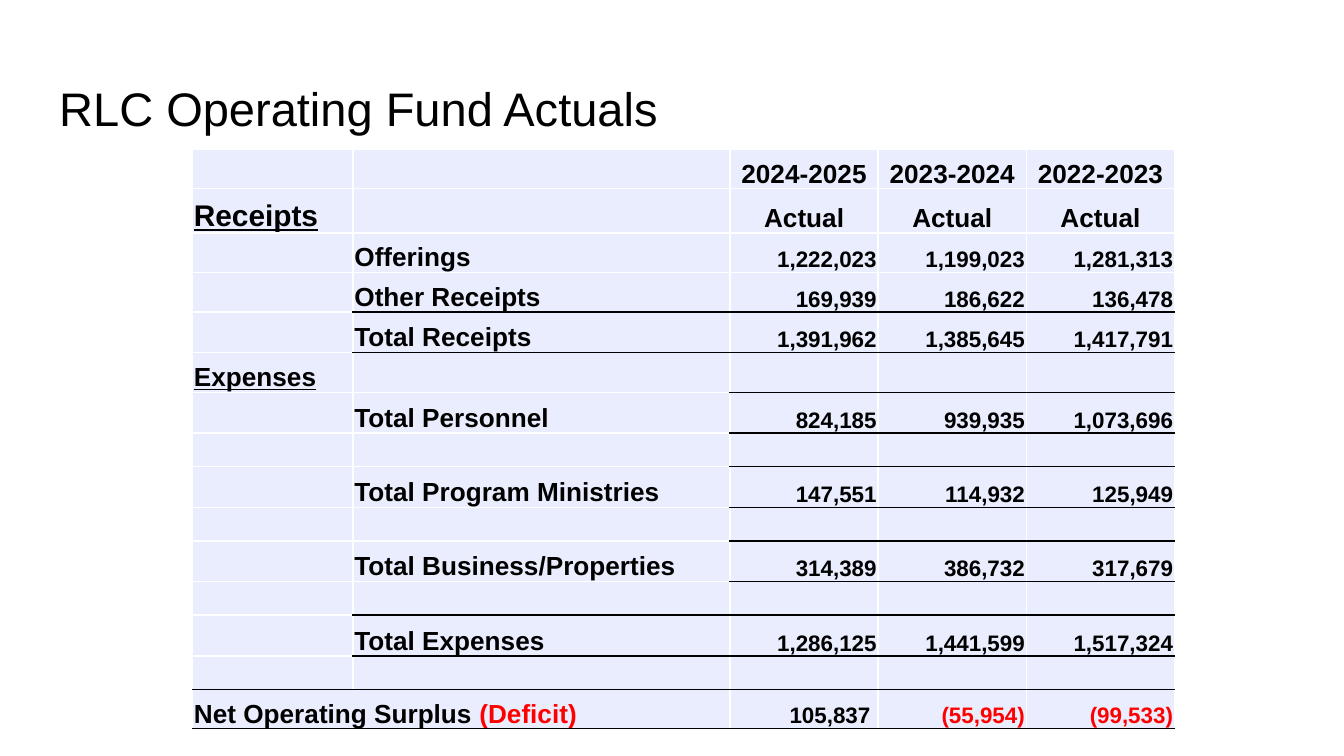
from pptx import Presentation
from pptx import util as u
from pptx.dml.color import RGBColor
from pptx.enum import text
from pptx.oxml import ns
from lxml import etree

BLACK = RGBColor(0x00, 0x00, 0x00)
WHITE = RGBColor(0xFF, 0xFF, 0xFF)
RED = RGBColor(0xFF, 0x00, 0x00)
LAVENDER = RGBColor(0xE9, 0xED, 0xFD)

LEFT, CENTER, RIGHT = text.PP_ALIGN.LEFT, text.PP_ALIGN.CENTER, text.PP_ALIGN.RIGHT
HEADING = {"size": u.Pt(14)}
SECTION = {"size": u.Pt(14), "underline": True}
LARGE_SECTION = {"size": u.Pt(16), "underline": True}
AMOUNT = {"size": u.Pt(12)}

COLUMN_WIDTHS = [86, 202, 79.4, 79.4, 79.4]
YEARS = ["2024-2025", "2023-2024", "2022-2023"]
# Row height, first column of the black rule below (None for no rule), texts
ROWS = [
    (21, None, ["", "", *YEARS]),
    (23.8, None, ["Receipts", "", "Actual", "Actual", "Actual"]),
    (21.2, None, ["", "Offerings", "1,222,023", "1,199,023", "1,281,313"]),
    (21, 1, ["", "Other Receipts", "169,939", "186,622", "136,478"]),
    (21.8, 1, ["", "Total Receipts", "1,391,962", "1,385,645", "1,417,791"]),
    (21.4, 2, ["Expenses", "", "", "", ""]),
    (21.8, 2, ["", "Total Personnel", "824,185", "939,935", "1,073,696"]),
    (18, 2, [""] * 5),
    (21.8, 2, ["", "Total Program Ministries", "147,551", "114,932", "125,949"]),
    (18, 2, [""] * 5),
    (21.8, 2, ["", "Total Business/Properties", "314,389", "386,732", "317,679"]),
    (18, 1, [""] * 5),
    (21.8, 1, ["", "Total Expenses", "1,286,125", "1,441,599", "1,517,324"]),
    (18, 0, [""] * 5),
    (21, 0, ["Net Operating Surplus (Deficit)", "", "105,837 ", "(55,954)", "(99,533)"]),
]


def set_attributes(target, values):
    for name, value in values.items():
        setattr(target, name, value)


def rule_color(row, column):
    """Colour of the horizontal rule below a row; row -1 is the top edge."""
    start = ROWS[row][1] if row >= 0 else None
    return BLACK if start is not None and column >= start else WHITE


def cell_format(row, column):
    if column < 2:
        styles = {"Receipts": LARGE_SECTION, "Expenses": SECTION}
        return LEFT, styles.get(ROWS[row][2][column], HEADING)
    return (CENTER, HEADING) if row < 2 else (RIGHT, AMOUNT)


class SlideBuilder:
    def __init__(self, presentation):
        self.font_name = "Arial"
        self.slide = presentation.slides.add_slide(presentation.slide_layouts[5])

    def title(self, wording, left, top, width, height):
        shape = self.slide.shapes.title
        set_attributes(shape, {"left": u.Pt(left), "top": u.Pt(top),
                               "width": u.Pt(width), "height": u.Pt(height)})
        frame = shape.text_frame
        margins = {f"margin_{side}": u.Pt(7.2) for side in ("left", "top", "right", "bottom")}
        set_attributes(frame, {**margins, "word_wrap": True,
                               "auto_size": text.MSO_AUTO_SIZE.NONE,
                               "vertical_anchor": text.MSO_ANCHOR.MIDDLE})
        frame.paragraphs[0].alignment = LEFT
        self.run(frame.paragraphs[0], wording, BLACK, {"size": u.Pt(25.2)})

    def run(self, paragraph, wording, color, values):
        run = paragraph.add_run()
        run.text = wording
        set_attributes(run.font, {"name": self.font_name, **values})
        run.font.color.rgb = color

    def table(self, left, top):
        heights = [height for height, _, _ in ROWS]
        frame = self.slide.shapes.add_table(
            len(ROWS), len(COLUMN_WIDTHS), u.Pt(left), u.Pt(top),
            u.Pt(sum(COLUMN_WIDTHS)), u.Pt(sum(heights)))
        table = frame.table
        set_attributes(table, {"first_row": False, "horz_banding": False})
        for column, width in zip(table.columns, COLUMN_WIDTHS):
            column.width = u.Pt(width)
        for row, height in zip(table.rows, heights):
            row.height = u.Pt(height)
        for row, (_, _, wordings) in enumerate(ROWS):
            for column, wording in enumerate(wordings):
                self.cell(table.cell(row, column), row, column, wording)
        last = len(ROWS) - 1
        table.cell(last, 0).merge(table.cell(last, 1))

    def cell(self, cell, row, column, wording):
        set_attributes(cell, {"margin_left": u.Pt(0.8), "margin_right": u.Pt(0.8),
                              "margin_top": u.Pt(0.8), "margin_bottom": 0,
                              "vertical_anchor": text.MSO_ANCHOR.BOTTOM})
        self.borders(cell, {"L": WHITE, "R": WHITE,
                            "T": rule_color(row - 1, column),
                            "B": rule_color(row, column)})
        cell.fill.solid()
        cell.fill.fore_color.rgb = LAVENDER
        paragraph = cell.text_frame.paragraphs[0]
        paragraph.alignment, values = cell_format(row, column)
        if not wording:
            # Small text size keeps an empty row from growing
            etree.SubElement(paragraph._p, ns.qn("a:endParaRPr"), sz="1200")
            return
        plain, bracket, deficit = wording.partition("(")
        for part, color in ((plain, BLACK), (bracket + deficit, RED)):
            if part:
                self.run(paragraph, part, color, {"bold": True, **values})

    def borders(self, cell, colors):
        properties = cell._tc.get_or_add_tcPr()
        for side, color in colors.items():
            line = etree.SubElement(properties, ns.qn(f"a:ln{side}"), w=str(u.Pt(1)))
            fill = etree.SubElement(line, ns.qn("a:solidFill"))
            etree.SubElement(fill, ns.qn("a:srgbClr"), val=str(color))


def main():
    presentation = Presentation()
    set_attributes(presentation, {"slide_width": u.Pt(720), "slide_height": u.Pt(405)})
    builder = SlideBuilder(presentation)
    builder.title("RLC Operating Fund Actuals", 24.5, 35, 671, 45.1)
    builder.table(103.1, 80.1)
    presentation.save("out.pptx")


if __name__ == "__main__":
    main()
